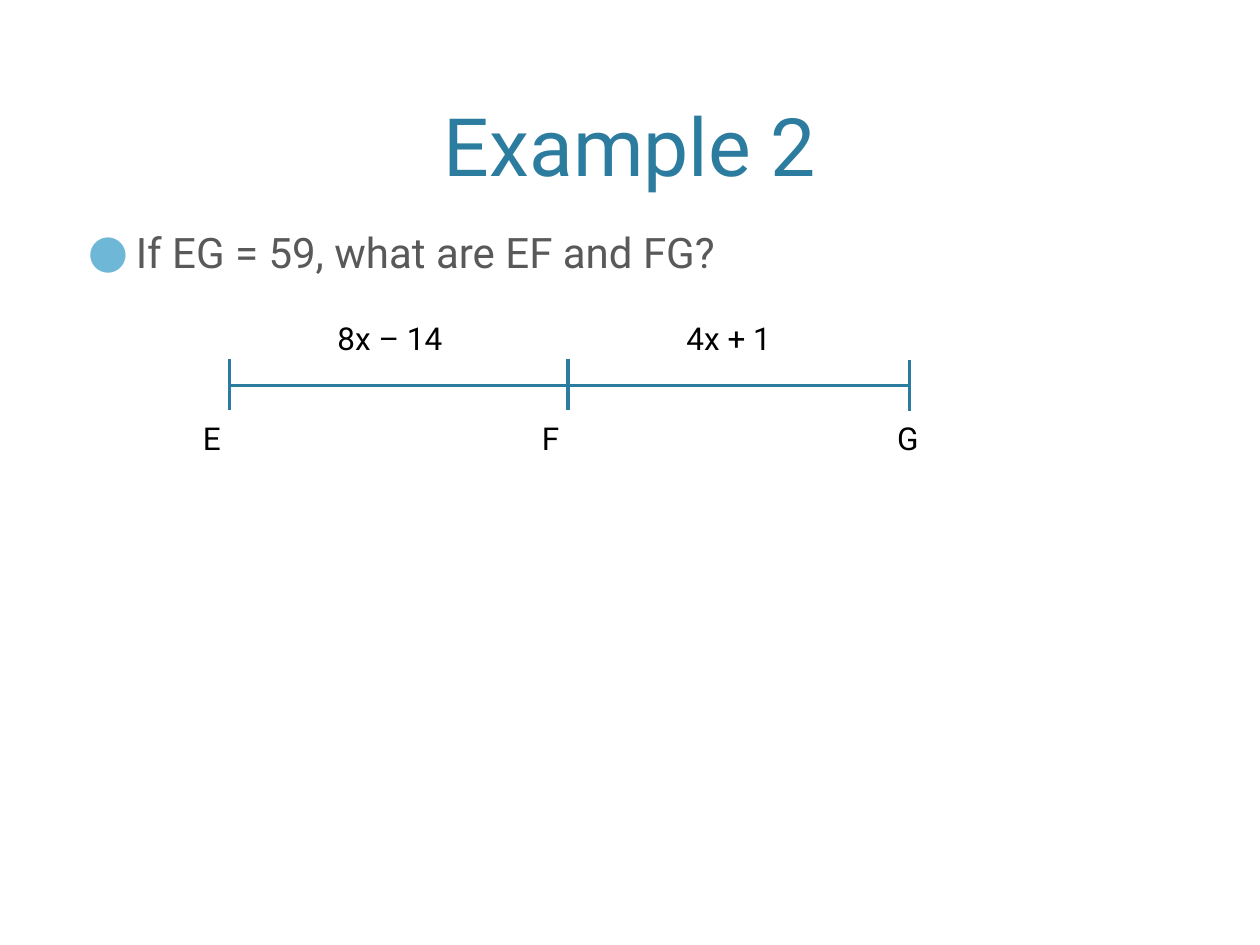
from dataclasses import dataclass
from typing import NamedTuple

from lxml import etree
from pptx import Presentation, util as u
from pptx.dml.color import RGBColor
from pptx.enum import shapes, text
from pptx.oxml.ns import qn

COLUMNS, ROWS = 100, 75


@dataclass(frozen=True)
class Theme:
    font: str = "Roboto"
    accent: str = "2C7C9F"
    bullet: str = "6FB7D7"
    body: str = "595959"
    label: str = "000000"
    title_size: int = 46
    body_size: int = 24
    label_size: int = 18
    line_width: int = 2


class Box(NamedTuple):
    """A place on the grid, in columns and rows."""
    column: float
    row: float
    columns: float
    rows: float


class Tick(NamedTuple):
    column: float
    top: float


class Expression(NamedTuple):
    wording: str
    box: Box


THEME = Theme()
TICK_ROWS = 4
SEGMENT_ROW = 30.6
TICKS = (Tick(18.2, 28.5), Tick(45.1, 28.5), Tick(72.2, 28.6))
EXPRESSIONS = (
    Expression("8x – 14", Box(25.8, 24.8, 12.3, 7.1)),
    Expression("4x + 1", Box(53.5, 24.8, 12.3, 4)),
)
POINT_NAMES = "E\tF\tG"
POINT_BOX = Box(13.5, 32.8, 63.3, 7.1)
POINT_INSET = 2.6
POINT_STOPS = (26.9, 55.1)

deck = Presentation()
deck.slide_width, deck.slide_height = u.Inches(10), u.Inches(7.5)
slide = deck.slides.add_slide(deck.slide_layouts[6])


def across(columns: float) -> int:
    return round(deck.slide_width * columns / COLUMNS)


def down(rows: float) -> int:
    return round(deck.slide_height * rows / ROWS)


def add_text(wording: str, box: Box, *, size: int = THEME.label_size,
             color: str = THEME.label, align=text.PP_ALIGN.LEFT,
             anchor=text.MSO_ANCHOR.TOP, inset: float = 1,
             bullet: bool = False, stops: tuple[float, ...] = ()) -> None:
    holder = slide.shapes.add_textbox(across(box.column), down(box.row),
                                      across(box.columns), down(box.rows))
    frame = holder.text_frame
    frame.word_wrap = True
    frame.vertical_anchor = anchor
    frame.margin_left = across(inset)
    paragraph = frame.paragraphs[0]
    paragraph.alignment = align
    run = paragraph.add_run()
    run.text = wording
    run.font.name = THEME.font
    run.font.size = u.Pt(size)
    run.font.color.rgb = RGBColor.from_string(color)
    properties = paragraph._p.get_or_add_pPr()
    if bullet:
        add_bullet(properties)
    if stops:
        tabs = etree.SubElement(properties, qn("a:tabLst"))
        for stop in stops:
            etree.SubElement(tabs, qn("a:tab"), pos=str(across(stop)), algn="l")


def add_bullet(properties) -> None:
    indent = across(3.8)
    properties.set("marL", str(indent))
    properties.set("indent", str(-indent))
    color = etree.SubElement(properties, qn("a:buClr"))
    etree.SubElement(color, qn("a:srgbClr"), val=THEME.bullet)
    etree.SubElement(properties, qn("a:buSzPct"), val="110000")
    etree.SubElement(properties, qn("a:buFont"), typeface=THEME.font)
    etree.SubElement(properties, qn("a:buChar"), char="●")


def add_line(start: tuple[float, float], end: tuple[float, float]) -> None:
    line = slide.shapes.add_connector(
        shapes.MSO_CONNECTOR.STRAIGHT, across(start[0]), down(start[1]),
        across(end[0]), down(end[1]))
    line.line.color.rgb = RGBColor.from_string(THEME.accent)
    line.line.width = u.Pt(THEME.line_width)
    etree.SubElement(line._element.spPr, qn("a:effectLst"))


def main() -> None:
    add_text("Example 2", Box(6, 1.2, 88, 14.6), size=THEME.title_size,
             color=THEME.accent, align=text.PP_ALIGN.CENTER,
             anchor=text.MSO_ANCHOR.BOTTOM)
    add_text("If EG = 59, what are EF and FG?", Box(6, 17.5, 88, 47.5),
             size=THEME.body_size, color=THEME.body, bullet=True)

    add_line((TICKS[0].column, SEGMENT_ROW), (TICKS[-1].column, SEGMENT_ROW))
    for tick in TICKS:
        add_line(tick, (tick.column, tick.top + TICK_ROWS))

    for expression in EXPRESSIONS:
        add_text(expression.wording, expression.box)
    add_text(POINT_NAMES, POINT_BOX, inset=POINT_INSET, stops=POINT_STOPS)

    deck.save("out.pptx")


if __name__ == "__main__":
    main()
